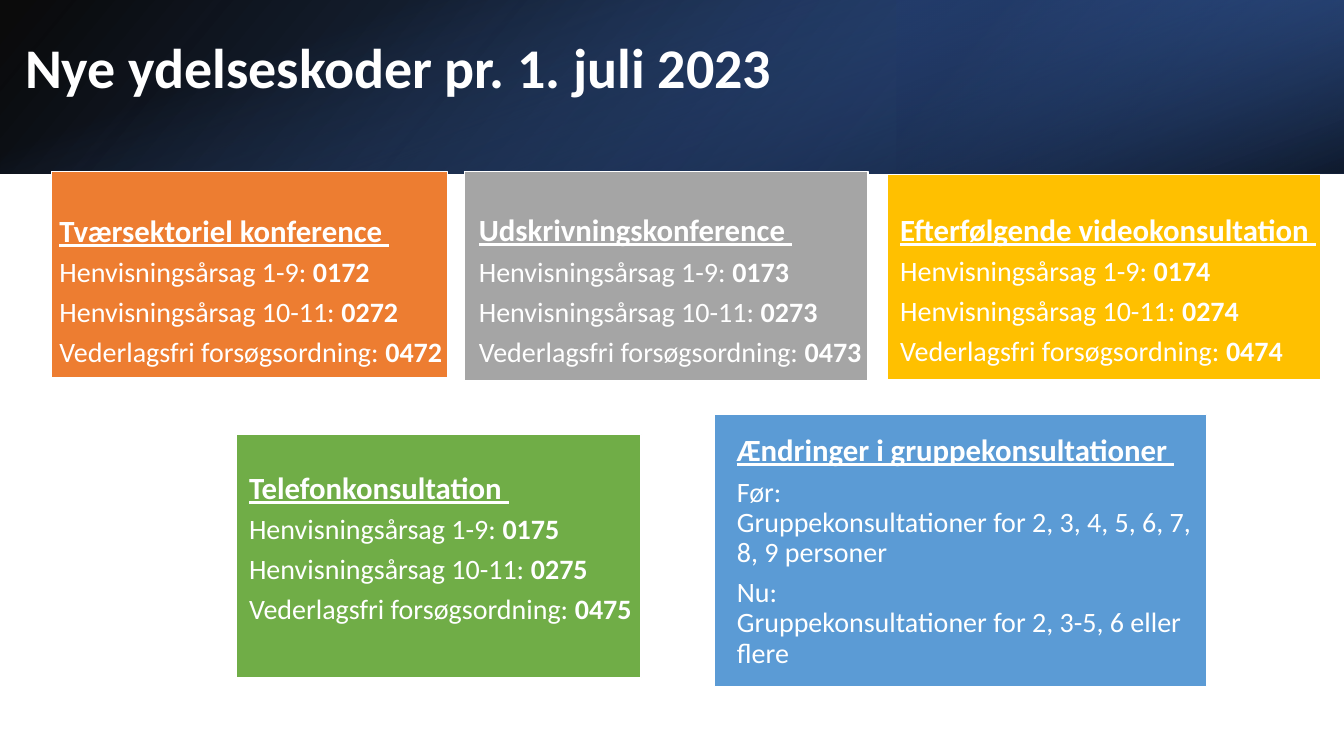
from lxml import etree
from pptx import Presentation
from pptx.dml.color import RGBColor
from pptx.enum.shapes import MSO_SHAPE
from pptx.enum.text import MSO_ANCHOR
from pptx.oxml.ns import qn
from pptx.util import Inches, Pt

RECT = MSO_SHAPE.RECTANGLE
MID, LOW = MSO_ANCHOR.MIDDLE, MSO_ANCHOR.BOTTOM

HUES = {
    "white": "FFFFFF", "black": "000000", "navy": "203864", "deep": "2F5597",
    "royal": "4472C4", "orange": "ED7D31", "grey": "A5A5A5",
    "gold": "FFC000", "green": "70AD47", "blue": "5B9BD5",
}


class Deck:
    """Draw on one slide, with every box given in percent of its size."""

    def __init__(self):
        self.prs = Presentation()
        self.prs.slide_width, self.prs.slide_height = Inches(13.333), Inches(7.5)
        self.slide = self.prs.slides.add_slide(self.prs.slide_layouts[6])
        self.font = {"name": "Calibri", "size": Pt(20), "bold": False}
        self.head = {"size": Pt(22), "bold": True, "underline": True}
        self.inset = Inches(0.08)

    def place(self, box):
        wide, high = self.prs.slide_width, self.prs.slide_height
        return [round(part * full / 100) for part, full in zip(box, (wide, high) * 2)]

    def hue(self, name):
        return RGBColor.from_string(HUES[name])

    def block(self, box):
        shape = self.slide.shapes.add_shape(RECT, *box)
        shape.shadow.inherit = False
        return shape

    def band(self, box, stops, angle, turn=0, flip=False):
        left, top, wide, high = self.place(box)
        if turn == 90:
            left, top = left + (wide - high) // 2, top + (high - wide) // 2
            wide, high = high, wide
        shape = self.block((left, top, wide, high))
        shape.rotation = turn
        if flip:
            shape.element.spPr.find(qn("a:xfrm")).set("flipH", "1")
        shape.line.fill.background()
        shape.fill.gradient()
        shape.fill.gradient_angle = 360 - angle
        for stop, (spot, name, alpha) in zip(shape.fill.gradient_stops, stops):
            stop.position = spot / 100
            stop.color.rgb = self.hue(name)
        marks = shape.element.spPr.iter(qn("a:srgbClr"))
        for mark, (spot, name, alpha) in zip(marks, stops):
            etree.SubElement(mark, qn("a:alpha")).set("val", str(alpha * 1000))

    def card(self, box, name):
        shape = self.block(self.place(box))
        shape.fill.solid()
        shape.fill.fore_color.rgb = self.hue(name)
        shape.line.color.rgb = self.hue("white")
        shape.line.width = Pt(1)

    def run(self, para, text, style):
        run = para.add_run()
        run.text = text
        for key, value in {**self.font, **style}.items():
            setattr(run.font, key, value)
        run.font.color.rgb = self.hue("white")

    def frame(self, box, anchor):
        frame = self.slide.shapes.add_textbox(*self.place(box)).text_frame
        frame.word_wrap = True
        frame.vertical_anchor = anchor
        return frame

    def title(self, box, text):
        para = self.frame(box, LOW).paragraphs[0]
        para.line_spacing = 0.9
        self.run(para, text, {"size": Pt(40), "bold": True})

    def notes(self, box, head, rows, broken=False):
        frame = self.frame(box, MID)
        for side in ("left", "top", "right", "bottom"):
            setattr(frame, "margin_" + side, self.inset)
        para = frame.paragraphs[0]
        self.run(para, head + " ", self.head)
        for label, value in rows:
            para = frame.add_paragraph()
            self.run(para, label, {})
            if broken:
                para.add_line_break()
            self.run(para, value, {"bold": not broken})
        for para in frame.paragraphs:
            para.line_spacing = 0.9
            para.space_after = Pt(7)


def main():
    deck = Deck()
    top = (0, 0, 100, 22.93)
    deck.band(top, [(0, "black", 96), (100, "deep", 100)], 140, flip=True)
    deck.band((66.67, 0, 33.33, 22.93), [(19, "navy", 68), (100, "royal", 79)],
              320, turn=180, flip=True)
    deck.band(top, [(23, "royal", 0), (99, "black", 74)], 340, turn=90)
    deck.title((1.13, 1.87, 57.3, 12.13), "Nye ydelseskoder pr. 1. juli 2023")

    kinds = [
        ("Tværsektoriel konference", "orange",
         (3.83, 22.67, 29.48, 27.33), (3.83, 19.73, 30, 37.87)),
        ("Udskrivningskonference", "grey",
         (34.58, 22.67, 30, 27.73), (35.03, 19.73, 31.13, 37.73)),
        ("Efterfølgende videokonsultation", "gold",
         (66, 23.07, 32.25, 27.2), (66.38, 19.6, 32.33, 37.87)),
        ("Telefonkonsultation", "green",
         (17.55, 57.47, 30.15, 32.13), (17.93, 53.73, 32.33, 37.87)),
    ]
    groups = [("Henvisningsårsag 1-9: ", "01"), ("Henvisningsårsag 10-11: ", "02"),
              ("Vederlagsfri forsøgsordning: ", "04")]
    for code, (head, name, box, area) in enumerate(kinds, 72):
        deck.card(box, name)
        deck.notes(area, head, [(label, f"{lead}{code}") for label, lead in groups])

    deck.card((53.18, 54.8, 36.6, 36), "blue")
    deck.notes((54.23, 50, 36.83, 46), "Ændringer i gruppekonsultationer", [
        ("Før:", "Gruppekonsultationer for 2, 3, 4, 5, 6, 7, 8, 9 personer"),
        ("Nu:", "Gruppekonsultationer for 2, 3-5, 6 eller flere"),
    ], broken=True)
    deck.prs.save("out.pptx")


if __name__ == "__main__":
    main()
